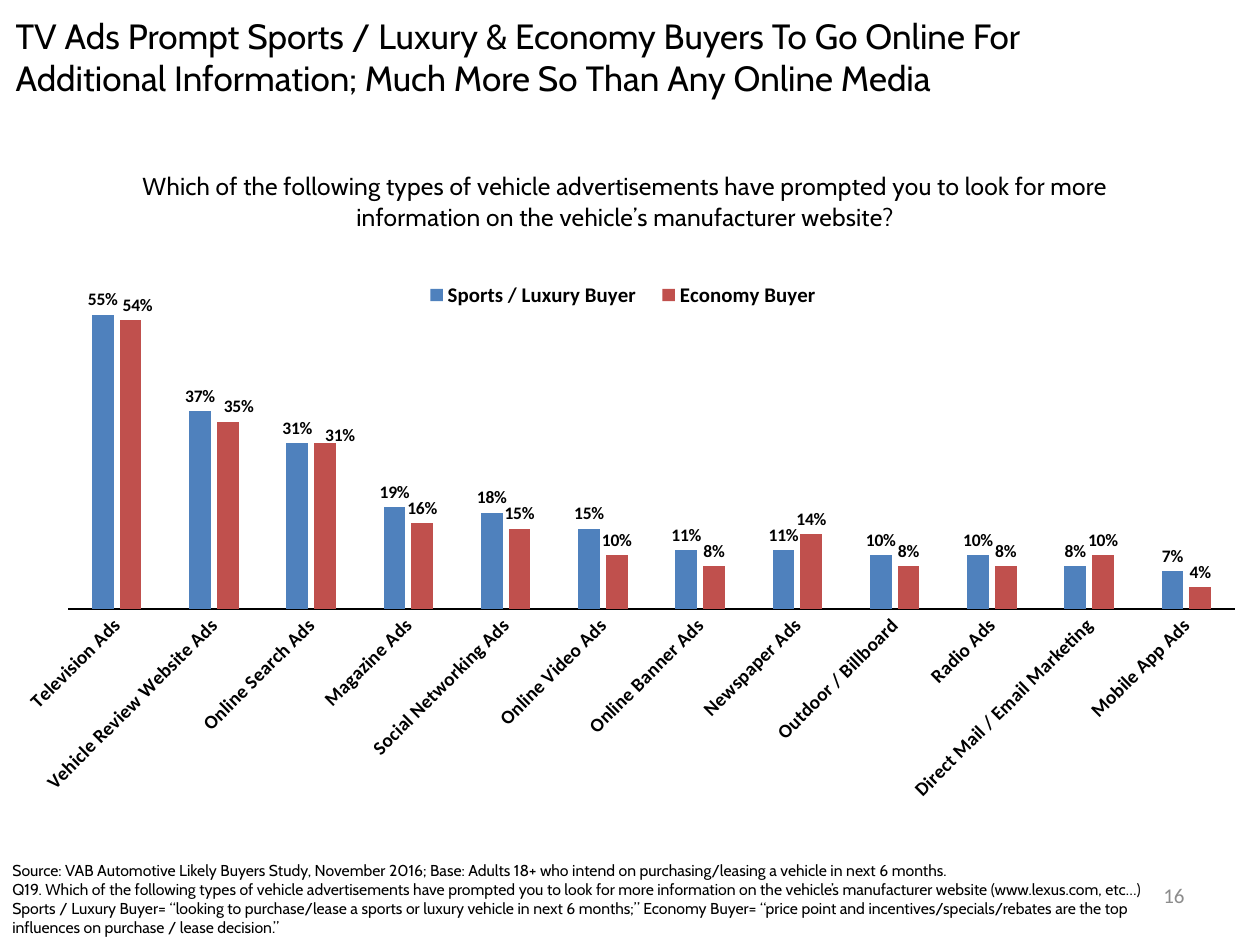
import pptx
import pptx.util
import pptx.chart.data
import pptx.dml.color
import pptx.enum.chart
import pptx.enum.text
import pptx.oxml
import pptx.oxml.ns

PX = 914400 / 126
NS = pptx.oxml.ns.nsdecls("c")
pt = pptx.util.Pt
qn = pptx.oxml.ns.qn
enum = pptx.enum.chart


def style(font, name, size, color="000000", bold=False):
    look = {"name": name, "size": pt(size), "bold": bold}
    for key, val in look.items():
        setattr(font, key, val)
    font.color.rgb = pptx.dml.color.RGBColor.from_string(color)


def layout(kind="edge", **pos):
    """Chart layout from fractions of the chart's size."""
    target = '<c:layoutTarget val="inner"/>' if kind == "inner" else ""
    modes = "" if kind == "shift" else '<c:xMode val="edge"/><c:yMode val="edge"/>'
    vals = "".join(f'<c:{k} val="{v:.4f}"/>' for k, v in pos.items())
    return pptx.oxml.parse_xml(
        f"<c:layout {NS}><c:manualLayout>{target}{modes}{vals}"
        "</c:manualLayout></c:layout>")


deck = pptx.Presentation()
deck.slide_width, deck.slide_height = int(1260 * PX), int(945 * PX)
slide = deck.slides.add_slide(deck.slide_layouts[5])

# Title, source note and page number
source = (
    "Source: VAB Automotive Likely Buyers Study, November 2016; Base: Adults 18+ who "
    "intend on purchasing/leasing a vehicle in next 6 months.\n"
    "Q19. Which of the following types of vehicle advertisements have prompted you to "
    "look for more information on the vehicle’s manufacturer website (www.lexus.com, "
    "etc…) Sports / Luxury Buyer= “looking to purchase/lease a sports or luxury vehicle "
    "in next 6 months;” Economy Buyer= “price point and incentives/specials/rebates are "
    "the top influences on purchase / lease decision.”")
head = ("TV Ads Prompt Sports / Luxury & Economy Buyers To Go Online For "
        "Additional Information; Much More So Than Any Online Media")
align = pptx.enum.text.PP_ALIGN
texts = [
    (slide.shapes.title, (3, 8, 1089, 120), head, "Cabin", 20, "000000", align.LEFT),
    (None, (0, 855, 1169, 90), source, "Cabin", 9, "000000", align.LEFT),
    (None, (903, 876, 294, 50), "16", "Calibri", 12, "8C8C8C", align.RIGHT),
]
for box, rect, text, face, size, color, side in texts:
    rect = [int(n * PX) for n in rect]
    box = box or slide.shapes.add_textbox(*rect)
    box.left, box.top, box.width, box.height = rect
    frame = box.text_frame
    frame.text = text
    frame.word_wrap = True
    frame.auto_size = pptx.enum.text.MSO_AUTO_SIZE.NONE
    frame.vertical_anchor = pptx.enum.text.MSO_ANCHOR.TOP
    for para in frame.paragraphs:
        para.alignment = side
        for run in para.runs:
            style(run.font, face, size, color)

# Chart data
rows = [
    ("Television Ads", 0.55, 0.54),
    ("Vehicle Review Website Ads", 0.37, 0.35),
    ("Online Search Ads", 0.31, 0.31),
    ("Magazine Ads", 0.19, 0.16),
    ("Social Networking Ads", 0.18, 0.15),
    ("Online Video Ads", 0.15, 0.10),
    ("Online Banner Ads", 0.11, 0.08),
    ("Newspaper Ads", 0.11, 0.14),
    ("Outdoor / Billboard", 0.10, 0.08),
    ("Radio Ads", 0.10, 0.08),
    ("Direct Mail / Email Marketing", 0.08, 0.10),
    ("Mobile App Ads", 0.07, 0.04),
]
names, lux, econ = zip(*rows)
data = pptx.chart.data.CategoryChartData(number_format="0%")
data.categories = names
data.add_series("Sports / Luxury Buyer", lux)
data.add_series("Economy Buyer", econ)
wide, high, top = 1260, 680, 136
chart = slide.shapes.add_chart(
    enum.XL_CHART_TYPE.COLUMN_CLUSTERED, 0, int(top * PX),
    int(wide * PX), int(high * PX), data).chart
style(chart.font, "Calibri", 10)

# Chart title
chart.has_title = True
title = chart.chart_title
title.text_frame.text = (
    "Which of the following types of vehicle advertisements have prompted you to look "
    "for more information on the vehicle’s manufacturer website?")
style(title.text_frame.paragraphs[0].runs[0].font, "Cabin", 14)
title.include_in_layout = False
node = title._element
for old in node.findall(qn("c:layout")):
    node.remove(old)
node.find(qn("c:tx")).addnext(layout(x=138 / wide, y=29 / high))

# Legend
chart.has_legend = True
legend = chart.legend
legend.position = enum.XL_LEGEND_POSITION.TOP
legend.include_in_layout = False
style(legend.font, "Calibri", 11.9, bold=True)
node = legend._element
for old in node.findall(qn("c:layout")):
    node.remove(old)
node.find(qn("c:legendPos")).addnext(
    layout(x=411 / wide, y=142 / high, w=424 / wide, h=34 / high))

# Plot area and axes
area = chart._chartSpace.chart.plotArea
for old in area.findall(qn("c:layout")):
    area.remove(old)
area.insert(0, layout("inner", x=68 / wide, y=152 / high, w=1167 / wide, h=321 / high))
vaxis, caxis = chart.value_axis, chart.category_axis
for key, val in {"minimum_scale": 0, "maximum_scale": 0.6, "visible": False,
                 "has_major_gridlines": False}.items():
    setattr(vaxis, key, val)
caxis.major_tick_mark = enum.XL_TICK_MARK.NONE
style(caxis.tick_labels.font, "Calibri", 11, bold=True)
caxis._element.find(qn("c:txPr")).find(qn("a:bodyPr")).set("rot", "-2700000")
caxis.format.line.width = pt(0.75)
caxis.format.line.color.rgb = pptx.dml.color.RGBColor.from_string("000000")

# Columns and their labels
plot = chart.plots[0]
plot.gap_width, plot.overlap, plot.vary_by_categories = 219, -27, False
for series, color in zip(plot.series, ("4F81BD", "C0504D")):
    series.invert_if_negative = False
    series.format.fill.solid()
    series.format.fill.fore_color.rgb = pptx.dml.color.RGBColor.from_string(color)
    labels = series.data_labels
    for key, val in {"show_value": True, "number_format": "0%",
                     "number_format_is_linked": False,
                     "position": enum.XL_LABEL_POSITION.OUTSIDE_END}.items():
        setattr(labels, key, val)
    style(labels.font, "Calibri", 10, bold=True)

# Economy labels nudged clear of their neighbours
for i, (dx, dy) in enumerate([(7, 0), (11, 0), (15, 7)]):
    label = plot.series[1].points[i].data_label
    style(label.font, "Calibri", 10, bold=True)
    label.position = enum.XL_LABEL_POSITION.OUTSIDE_END
    spot = plot.series[1].data_labels._element.findall(qn("c:dLbl"))[i]
    idx = spot.find(qn("c:idx"))
    idx.addnext(pptx.oxml.parse_xml(
        f'<c:numFmt {NS} formatCode="0%" sourceLinked="0"/>'))
    idx.addnext(layout("shift", x=dx / wide, y=dy / high))

deck.save("out.pptx")
